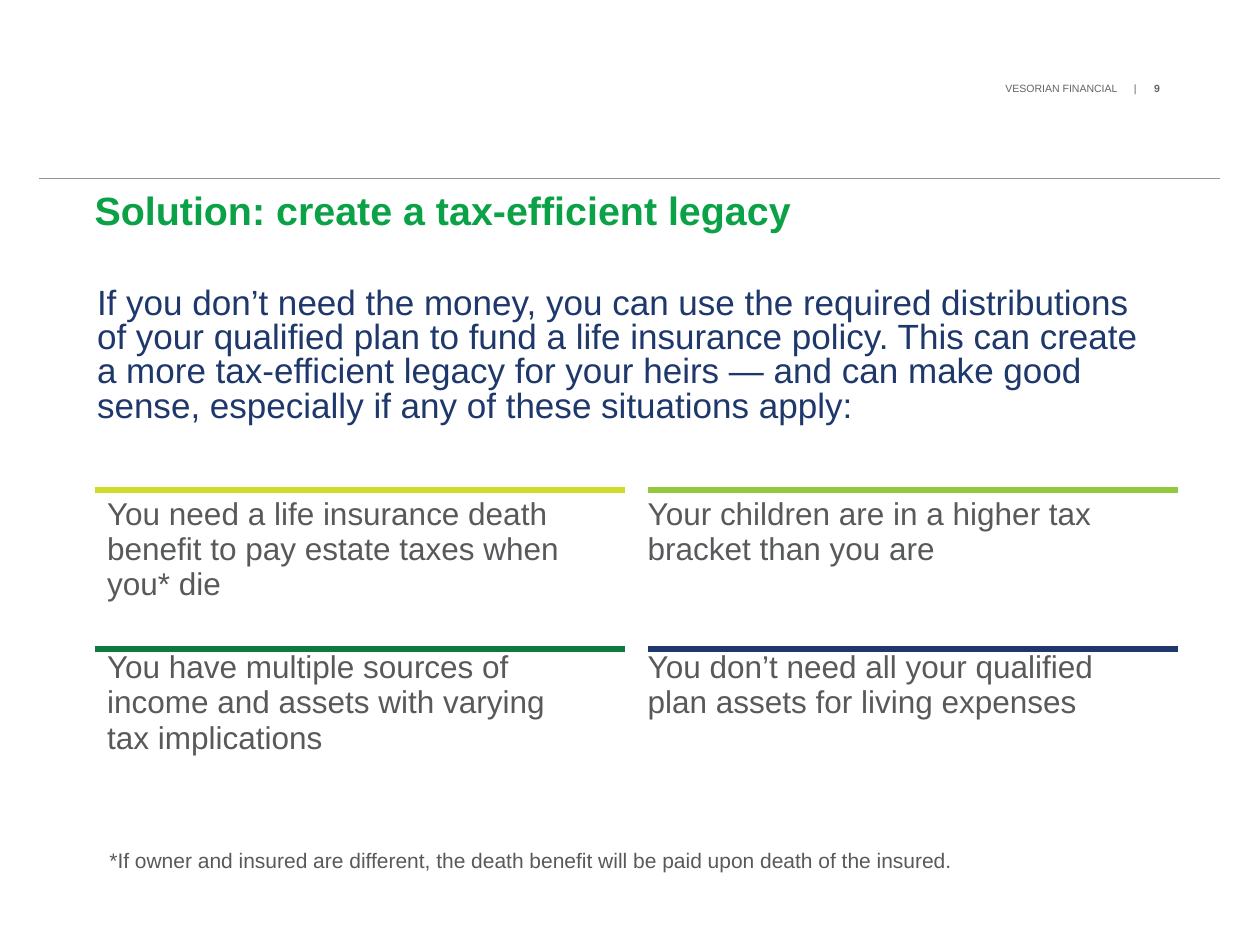
from dataclasses import dataclass
from pptx import Presentation
from pptx.dml.color import RGBColor
from pptx.enum.shapes import MSO_CONNECTOR as Link
from pptx.enum.text import MSO_ANCHOR as Anchor, MSO_AUTO_SIZE as Fit, PP_ALIGN as Align
from pptx.oxml.ns import qn
from pptx.util import Inches, Pt
from lxml.etree import SubElement as Sub


@dataclass(frozen=True)
class Theme:
    font: str = "Arial"
    green: str = "0AA147"
    navy: str = "1E386B"
    gray: str = "58595B"
    mark: str = "636466"
    rule: str = "929497"
    lime: str = "CEDC27"
    leaf: str = "95C93D"
    pine: str = "0C7B40"
    head: float = 22.5
    lead: float = 20
    cell: float = 18
    note: float = 12
    tiny: float = 6


THEME = Theme()
TOP, ROW = 3.89, 1.22
TABLES = [
    (0.75, 1.08, [
        "You need a life insurance death\nbenefit to pay estate taxes when\nyou* die",
        "You have multiple sources of\nincome and assets with varying\ntax implications",
    ]),
    (5.04, 0.78, [
        "Your children are in a higher tax\nbracket than you are",
        "You don’t need all your qualified\nplan assets for living expenses",
    ]),
]
BARS = [
    (0.75, TOP, THEME.lime),
    (0.75, 5.15, THEME.pine),
    (5.14, 5.15, THEME.navy),
    (5.14, TOP, THEME.leaf),
]


def style(frame, size, color, bold=False):
    for para in frame.paragraphs:
        for run in para.runs:
            font = run.font
            font.name, font.size, font.bold = THEME.font, Pt(size), bold
            font.color.rgb = RGBColor.from_string(color)


def inset(frame, wrap=True):
    frame.margin_left = frame.margin_right = 0
    frame.margin_top = frame.margin_bottom = 0
    frame.word_wrap = wrap


def add_line(slide, x, y, width, color, weight):
    line = slide.shapes.add_connector(
        Link.STRAIGHT, Inches(x), Inches(y), Inches(x + width), Inches(y))
    line.line.color.rgb = RGBColor.from_string(color)
    line.line.width = Pt(weight)
    Sub(line._element.spPr, qn("a:effectLst"))


def fill_holder(shape, box, text, size, color, lead, bold=False):
    shape.left, shape.top, shape.width, shape.height = map(Inches, box)
    frame = shape.text_frame
    frame.text = text
    frame.auto_size = Fit.NONE
    frame.vertical_anchor = Anchor.TOP
    inset(frame)
    para = frame.paragraphs[0]
    props = para._p.get_or_add_pPr()
    props.set("marL", "0")
    props.set("indent", "0")
    Sub(props, qn("a:buNone"))
    para.alignment = Align.LEFT
    para.line_spacing = Pt(lead)
    para.space_before = Pt(0)
    style(frame, size, color, bold)


def add_mark(slide):
    box = slide.shapes.add_textbox(Inches(7.97), Inches(0.64), Inches(1.74), Inches(0.12))
    frame = box.text_frame
    inset(frame)
    frame.margin_left = frame.margin_top = Inches(0.01)
    para = frame.paragraphs[0]
    tabs = Sub(para._p.get_or_add_pPr(), qn("a:tabLst"))
    for stop in (1.02, 1.18):
        Sub(tabs, qn("a:tab"), pos=str(Inches(stop)), algn="l")
    for text in ("VESORIAN FINANCIAL\t|\t", "9"):
        para.add_run().text = text
    style(frame, THEME.tiny, THEME.mark)
    para.runs[-1].font.bold = True


def add_grid(slide, x, last, texts):
    grid = slide.shapes.add_table(
        len(texts), 1, Inches(x), Inches(TOP), Inches(4.17), Inches(ROW + last)).table
    grid.first_row = grid.horz_banding = False
    for row, text, height in zip(grid.rows, texts, (ROW, last)):
        row.height = Inches(height)
        cell = row.cells[0]
        cell.fill.background()
        cell.text_frame.text = text
        style(cell.text_frame, THEME.cell, THEME.gray)


def add_note(slide, text):
    box = slide.shapes.add_textbox(Inches(0.77), Inches(6.68), Inches(6.94), Inches(0.3))
    frame = box.text_frame
    frame.word_wrap = False
    frame.text = text
    style(frame, THEME.note, THEME.gray)


def main():
    deck = Presentation()
    deck.slide_width, deck.slide_height = Inches(10), Inches(7.5)
    slide = deck.slides.add_slide(deck.slide_layouts[1])
    title, body = slide.placeholders
    add_mark(slide)
    add_line(slide, 0.31, 1.42, 9.37, THEME.rule, 0.5)
    fill_holder(title, (0.75, 1.53, 8.5, 1.05), "Solution: create a tax-efficient legacy",
                THEME.head, THEME.green, 23.2, True)
    for x, last, texts in TABLES:
        add_grid(slide, x, last, texts)
    fill_holder(body, (0.77, 2.29, 8.48, 1.46),
                "If you don’t need the money, you can use the required distributions "
                "of your qualified plan to fund a life insurance policy. This can create "
                "a more tax-efficient legacy for your heirs — and can make good sense, "
                "especially if any of these situations apply:",
                THEME.lead, THEME.navy, 19.5)
    add_note(slide, "*If owner and insured are different, the death benefit "
                    "will be paid upon death of the insured.")
    for x, y, color in BARS:
        add_line(slide, x, y, 4.21, color, 3)
    deck.save("out.pptx")


if __name__ == "__main__":
    main()
